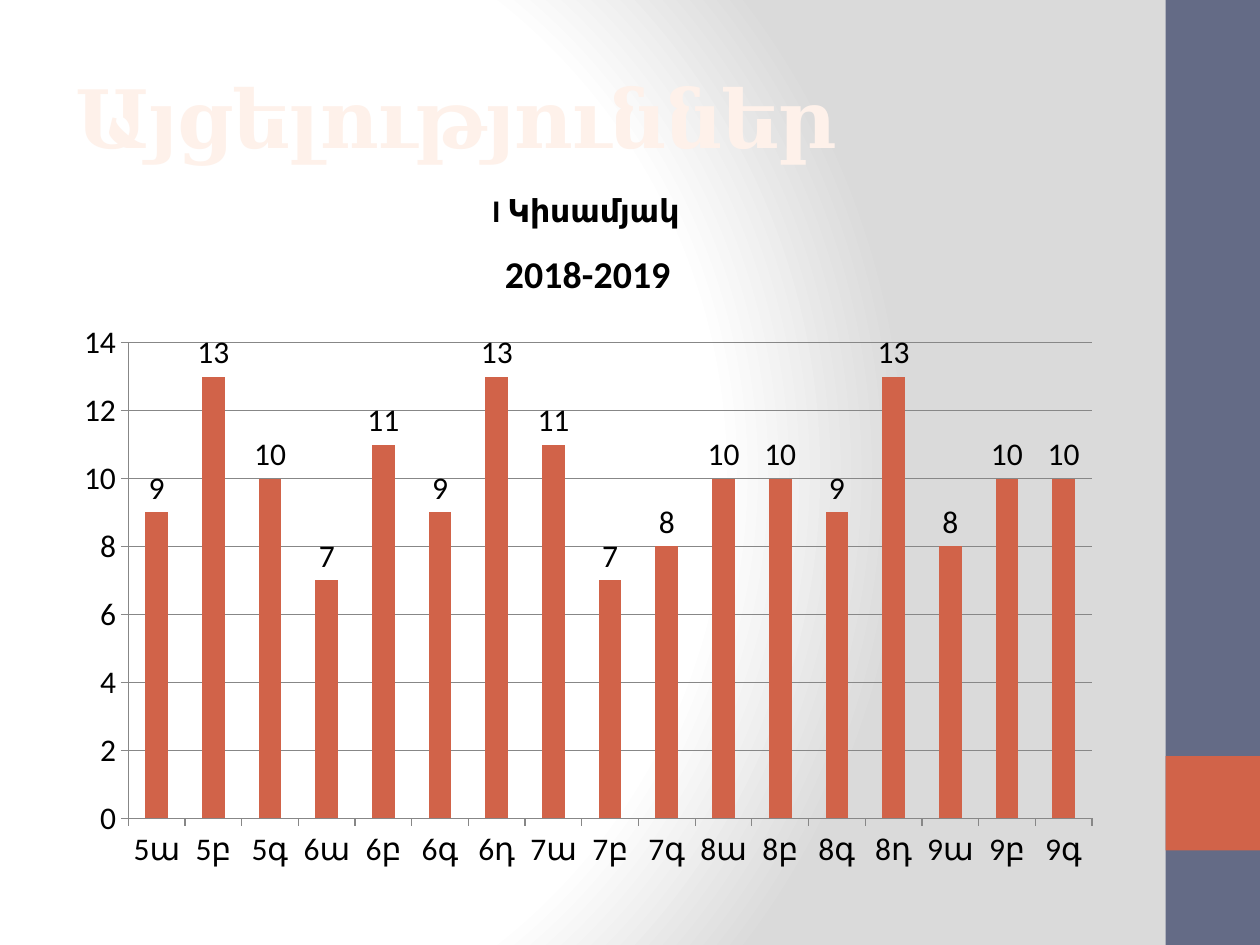
"""Build a slide with a column chart of class visits in the first half-year."""
import pptx
import pptx.chart.data
import pptx.dml.color
import pptx.enum.chart
import pptx.enum.shapes
import pptx.enum.text
import pptx.oxml
import pptx.util

Pt = pptx.util.Pt
NS = 'xmlns:a="http://schemas.openxmlformats.org/drawingml/2006/main"'


def rgb(value):
    return pptx.dml.color.RGBColor.from_string(value)


def style_font(font, name, size, color, bold=False):
    font.name = name
    font.size = Pt(size)
    font.bold = bold
    font.color.rgb = rgb(color)


deck = pptx.Presentation()
deck.slide_width, deck.slide_height = Pt(720), Pt(540)
slide = deck.slides.add_slide(deck.slide_layouts[6])

backdrop = slide.background.fill
backdrop.gradient()
gradient = slide.element.xpath("p:cSld/p:bg/p:bgPr/a:gradFill")[0]
stops = "".join(
    f'<a:gs pos="{pos * 1000}"><a:srgbClr val="{color}"/></a:gs>'
    for pos, color in [(0, "FFFFFF"), (75, "FFFFFF"), (100, "DADADA")]
)
gradient.getparent().replace(gradient, pptx.oxml.parse_xml(
    f'<a:gradFill {NS} rotWithShape="1"><a:gsLst>{stops}</a:gsLst><a:path path="circle">'
    '<a:fillToRect l="20000" t="50000" r="100000" b="50000"/></a:path></a:gradFill>'
))

for top, height, color in [(0, 540, "646B86"), (432, 54, "D16349")]:
    band = slide.shapes.add_shape(
        pptx.enum.shapes.MSO_SHAPE.RECTANGLE, Pt(666), Pt(top), Pt(54), Pt(height))
    band.shadow.inherit = False
    band.fill.solid()
    band.fill.fore_color.rgb = rgb(color)
    band.line.fill.background()

heading = slide.shapes.add_textbox(Pt(36), Pt(21.6), Pt(600), Pt(90)).text_frame
heading.word_wrap = True
heading.vertical_anchor = pptx.enum.text.MSO_ANCHOR.MIDDLE
heading.text = "Այցելություններ"
heading_font = heading.paragraphs[0].runs[0].font
style_font(heading_font, "Cambria", 46, "FEF1EA", True)
heading_props = heading.paragraphs[0].runs[0]._r.get_or_add_rPr()
heading_props.set("spc", "-100")
heading_props.insert(0, pptx.oxml.parse_xml(
    f'<a:ln {NS} w="31500"><a:solidFill><a:srgbClr val="C86D09"/></a:solidFill></a:ln>'))

classes = "5ա 5բ 5գ 6ա 6բ 6գ 6դ 7ա 7բ 7գ 8ա 8բ 8գ 8դ 9ա 9բ 9գ".split()
visits = [9, 13, 10, 7, 11, 9, 13, 11, 7, 8, 10, 10, 9, 13, 8, 10, 10]
visit_data = pptx.chart.data.CategoryChartData()
visit_data.categories = classes
visit_data.add_series("2018-2019", visits)
chart = slide.shapes.add_chart(
    pptx.enum.chart.XL_CHART_TYPE.COLUMN_CLUSTERED,
    Pt(36), Pt(126), Pt(600), Pt(378), visit_data).chart
style_font(chart.font, "Calibri", 18, "000000")
chart.has_legend = False
chart.has_title = True
chart.chart_title.include_in_layout = False
chart.chart_title.text_frame.text = "2018-2019"
year_font = chart.chart_title.text_frame.paragraphs[0].runs[0].font
style_font(year_font, "Calibri", 21.6, "000000", True)

visit_axis = chart.value_axis
visit_axis.minimum_scale, visit_axis.maximum_scale, visit_axis.major_unit = 0, 14, 2
visit_axis.has_major_gridlines = True
visit_axis.major_gridlines.format.line.color.rgb = rgb("878787")
for axis in (chart.category_axis, visit_axis):
    axis.major_tick_mark = pptx.enum.chart.XL_TICK_MARK.OUTSIDE
    axis.format.line.color.rgb = rgb("878787")

columns = chart.plots[0]
columns.gap_width = 150
columns.vary_by_categories = False
columns.series[0].format.fill.solid()
columns.series[0].format.fill.fore_color.rgb = rgb("D16349")
columns.has_data_labels = True
columns.data_labels.show_value = True
columns.data_labels.position = pptx.enum.chart.XL_LABEL_POSITION.OUTSIDE_END

term = slide.shapes.add_textbox(Pt(241.2), Pt(105.84), Pt(187.2), Pt(28.8)).text_frame
term.word_wrap = True
term.auto_size = pptx.enum.text.MSO_AUTO_SIZE.SHAPE_TO_FIT_TEXT
term.text = "I Կիսամյակ"
term.paragraphs[0].alignment = pptx.enum.text.PP_ALIGN.CENTER
style_font(term.paragraphs[0].runs[0].font, "Calibri", 18, "000000", True)

deck.save("out.pptx")
